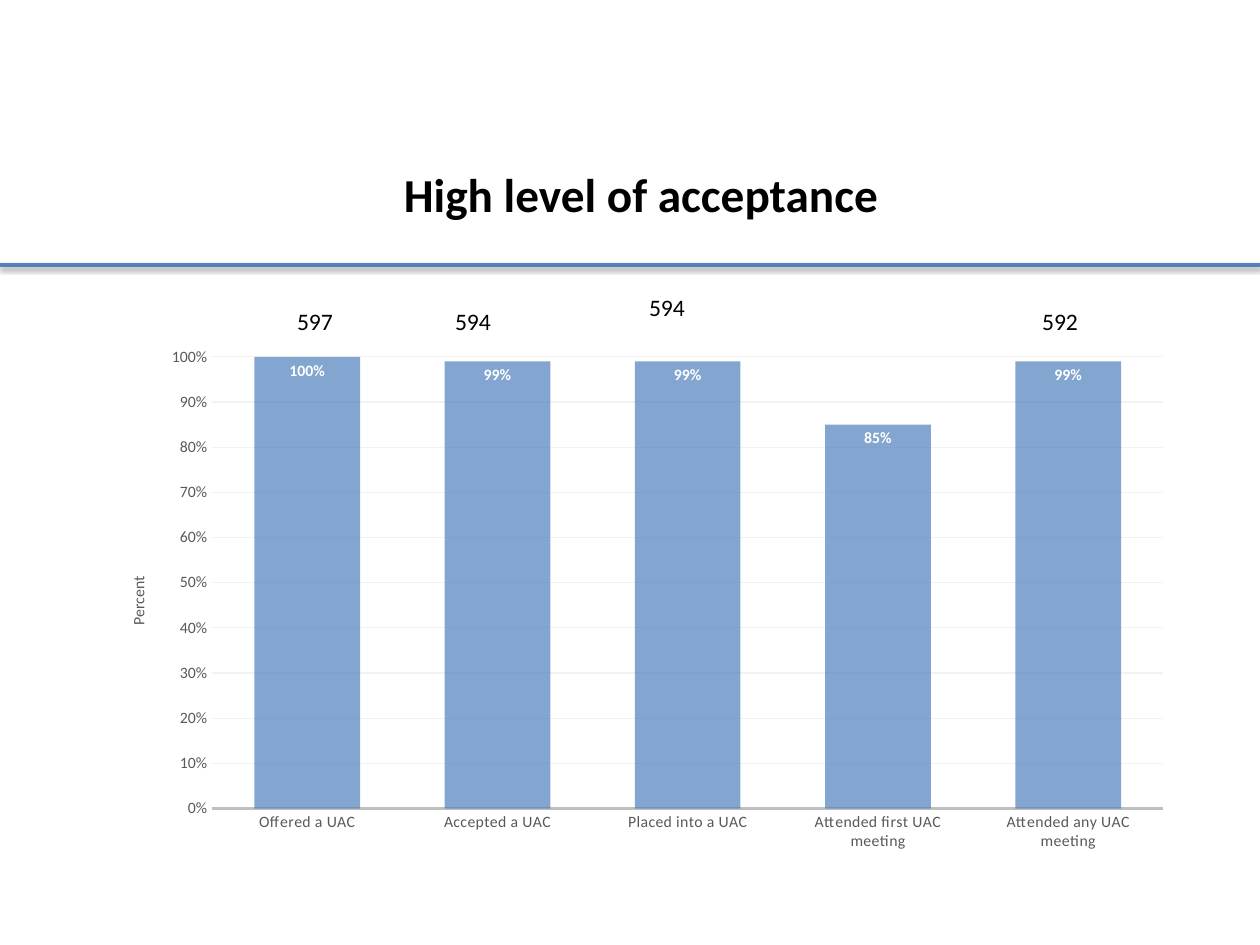
from lxml import etree
from pptx import Presentation
from pptx import util as u
from pptx.chart.data import CategoryChartData
from pptx.dml.color import RGBColor
from pptx.enum import chart as charts, shapes, text
from pptx.oxml import parse_xml
from pptx.oxml.ns import nsdecls, qn

COLOURS = {"black": "000000", "blue": "4F81BD", "grey": "595959",
           "axis": "BFBFBF", "grid": "F2F2F2", "white": "FFFFFF"}
SCALE = u.Inches(1) / 126


def px(length):
    return u.Emu(round(length * SCALE))


def colour(name):
    return RGBColor.from_string(COLOURS[name])


def set_font(font, size, color, bold=False):
    font.name = "Calibri"
    font.size = u.Pt(size)
    font.bold = bold
    font.color.rgb = colour(color)


def write_text(frame, content, size=13.5, color="black", bold=False,
               align=text.PP_ALIGN.CENTER):
    paragraph = frame.paragraphs[0]
    paragraph.alignment = align
    run = paragraph.add_run()
    run.text = content
    set_font(run.font, size, color, bold)


def set_line(line, color, width):
    line.color.rgb = colour(color)
    line.width = u.Pt(width)


def place(parent, x, y, width=None, height=None):
    """Give a chart part a fixed place, in fractions of the chart."""
    values = [("xMode", "edge"), ("yMode", "edge"), ("x", x), ("y", y)]
    if width:
        values = [("layoutTarget", "inner")] + values + [("w", width), ("h", height)]
    for old in parent.findall(qn("c:layout")):
        parent.remove(old)
    layout = etree.Element(qn("c:layout"))
    manual = etree.SubElement(layout, qn("c:manualLayout"))
    for tag, value in values:
        etree.SubElement(manual, qn(f"c:{tag}")).set("val", str(value))
    title_text = parent.find(qn("c:tx"))
    parent.insert(0 if title_text is None else 1, layout)


class SlideBuilder:
    """Holds the current slide and the style of its elements."""

    def __init__(self, slide):
        self.slide = slide

    def title(self, content, left, top, width, height):
        frame = self.slide.shapes.add_textbox(
            px(left), px(top), px(width), px(height)).text_frame
        frame.word_wrap = True
        frame.vertical_anchor = text.MSO_ANCHOR.MIDDLE
        write_text(frame, content, size=27, bold=True)

    def count(self, content, left, top):
        frame = self.slide.shapes.add_textbox(
            px(left), px(top), px(84), px(42)).text_frame
        frame.word_wrap = True
        frame.auto_size = text.MSO_AUTO_SIZE.SHAPE_TO_FIT_TEXT
        write_text(frame, content)

    def rule(self, top, width):
        connector = self.slide.shapes.add_connector(
            shapes.MSO_CONNECTOR.STRAIGHT, 0, px(top), px(width), px(top))
        set_line(connector.line, "blue", 2)
        connector._element.spPr.append(parse_xml(
            f'<a:effectLst {nsdecls("a")}><a:outerShdw blurRad="{u.Pt(3.1)}" '
            f'dist="{u.Pt(1.6)}" dir="5400000" rotWithShape="0">'
            f'<a:srgbClr val="{COLOURS["black"]}"><a:alpha val="38000"/></a:srgbClr>'
            '</a:outerShdw></a:effectLst>'))

    def column_chart(self, values, left, top, width, height):
        data = CategoryChartData(number_format="0%")
        data.categories = list(values)
        data.add_series("Series 1", list(values.values()))
        chart = self.slide.shapes.add_chart(
            charts.XL_CHART_TYPE.COLUMN_CLUSTERED,
            px(left), px(top), px(width), px(height), data).chart
        set_font(chart.font, 10, "black")
        chart.has_legend = chart.has_title = False
        place(chart._chartSpace.chart.plotArea, 0.105, 0.036, 0.876, 0.864)
        self.axes(chart)
        self.columns(chart.plots[0])

    def axes(self, chart):
        category, value = chart.category_axis, chart.value_axis
        for axis in (category, value):
            axis.major_tick_mark = axis.minor_tick_mark = charts.XL_TICK_MARK.NONE
            set_font(axis.tick_labels.font, 9, "grey")
        for properties in category._element.xpath("c:txPr//a:defRPr"):
            properties.set("spc", "20")
        set_line(category.format.line, "axis", 1.25)
        value.format.line.fill.background()
        value.minimum_scale, value.maximum_scale, value.major_unit = 0, 1, 0.1
        value.tick_labels.number_format = "0%"
        value.tick_labels.number_format_is_linked = False
        set_line(value.major_gridlines.format.line, "grid", 0.75)
        frame = value.axis_title.text_frame
        write_text(frame, "Percent", size=9, color="grey")
        frame._txBody.bodyPr.set("rot", "-5400000")
        frame._txBody.bodyPr.set("vert", "horz")
        place(value.axis_title._element, 0.025, 0.45)

    def columns(self, plot):
        plot.gap_width, plot.overlap = 80, 25
        plot.vary_by_categories = False
        fill = plot.series[0].format.fill
        fill.solid()
        fill.fore_color.rgb = colour("blue")
        for color in plot.series[0]._element.xpath("c:spPr/a:solidFill/a:srgbClr"):
            etree.SubElement(color, qn("a:alpha")).set("val", "70000")
        labels = plot.series[0].data_labels
        labels.show_value = True
        labels.position = charts.XL_LABEL_POSITION.INSIDE_END
        labels.number_format = "0%"
        labels.number_format_is_linked = False
        set_font(labels.font, 9, "white", bold=True)


def main():
    presentation = Presentation()
    presentation.slide_width, presentation.slide_height = px(1260), px(945)
    builder = SlideBuilder(presentation.slides.add_slide(presentation.slide_layouts[6]))
    builder.title("High level of acceptance", 98, 125, 1086, 137)
    builder.rule(265, 1260)
    for content, left, top in (("597", 273, 301), ("594", 431, 301),
                               ("594", 625, 287), ("592", 1018, 301)):
        builder.count(content, left, top)
    builder.column_chart({
        "Offered a UAC": 1, "Accepted a UAC": 0.99, "Placed into a UAC": 0.99,
        "Attended first UAC meeting": 0.85, "Attended any UAC meeting": 0.99,
    }, 98, 338, 1086, 523)
    presentation.save("out.pptx")


if __name__ == "__main__":
    main()
